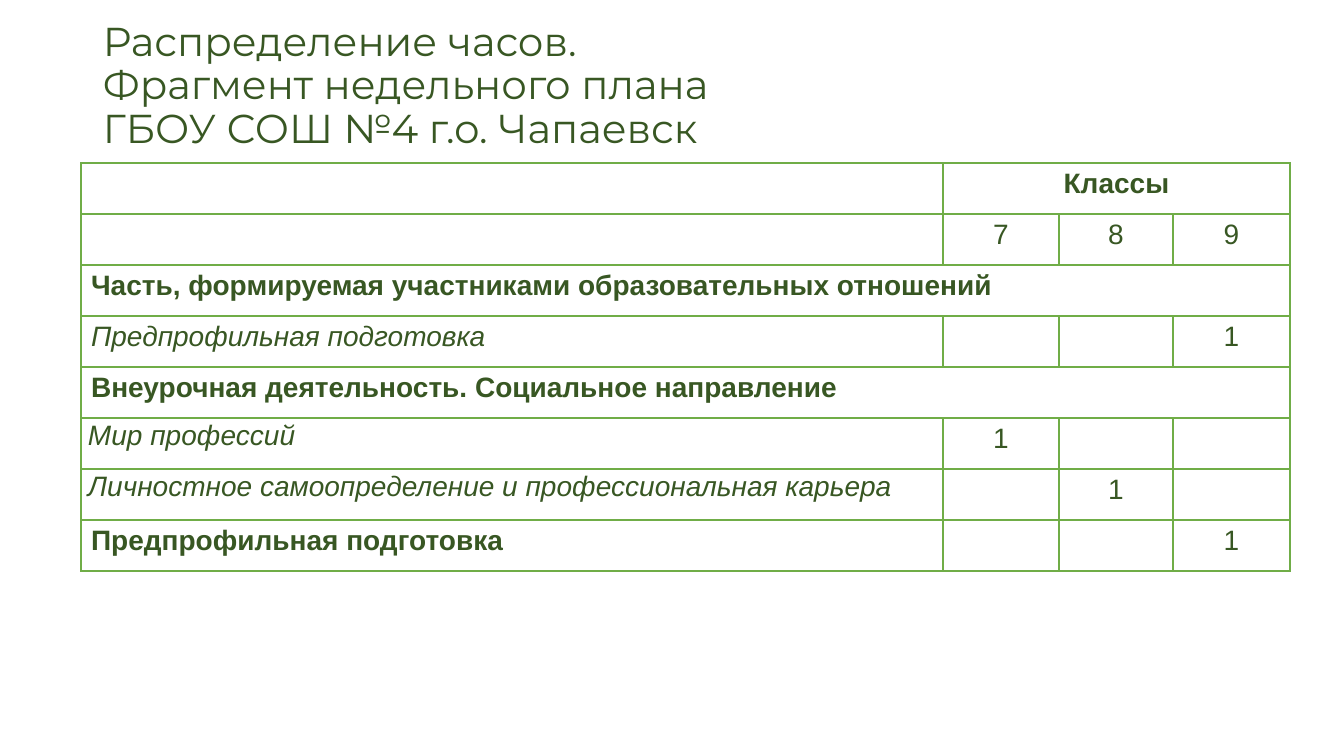
from dataclasses import dataclass

from lxml import etree
from pptx import Presentation
from pptx import util as u
from pptx.dml.color import RGBColor
from pptx.enum import text as t
from pptx.oxml import ns

TITLE = ["Распределение часов.", "Фрагмент недельного плана", "ГБОУ СОШ №4 г.о. Чапаевск"]

# Each row: style of the first cell, then the cell texts; a short row's last cell spans the rest.
ROWS = [
    ("plain", ["", "Классы"]),
    ("plain", ["", "7", "8", "9"]),
    ("bold", ["Часть, формируемая участниками образовательных отношений"]),
    ("italic", ["Предпрофильная подготовка", "", "", "1"]),
    ("bold", ["Внеурочная деятельность. Социальное направление"]),
    ("course", ["Мир профессий", "1", "", ""]),
    ("course", ["Личностное самоопределение и профессиональная карьера", "", "1", ""]),
    ("bold", ["Предпрофильная подготовка", "", "", "1"]),
]
STYLES = {
    "plain": {},
    "bold": {"bold": True},
    "italic": {"italic": True},
    "course": {"italic": True, "spacing": 1.06},
}

SLIDE = (1344, 756)
TITLE_BOX = (93, 49, 1159, 75)
TABLE_LEFT, TABLE_TOP = 81, 163
COLUMNS = [862, 116, 114, 117]
ROW_HEIGHT = 51
COURSE_INSET = 7


@dataclass(frozen=True)
class Theme:
    ink: str = "385723"
    border: str = "70AD47"
    title_font: str = "Montserrat"
    table_font: str = "Arial"
    title_size: float = 28.8
    table_size: float = 20
    border_width: float = 1


THEME = Theme()


def px(length):
    return u.Emu(round(length * 914400 / 100.8))


def write(frame, lines, *, font, size, bold=False, italic=False,
          align=t.PP_ALIGN.LEFT, spacing=None):
    """Fill the first paragraph with lines parted by line breaks."""
    para = frame.paragraphs[0]
    para.alignment = align
    para.line_spacing = spacing
    for index, line in enumerate(lines):
        if index:
            para.add_line_break()
        span = para.add_run()
        span.text = line
        span.font.name = font
        span.font.size = u.Pt(size)
        span.font.bold = bold
        span.font.italic = italic
        span.font.color.rgb = RGBColor.from_string(THEME.ink)


def outline(cell):
    properties = cell._tc.get_or_add_tcPr()
    for side in ("lnL", "lnR", "lnT", "lnB"):
        line = etree.SubElement(properties, ns.qn(f"a:{side}"),
                                w=str(u.Pt(THEME.border_width)))
        fill = etree.SubElement(line, ns.qn("a:solidFill"))
        etree.SubElement(fill, ns.qn("a:srgbClr"), val=THEME.border)


def add_title(page):
    frame = page.shapes.add_textbox(*map(px, TITLE_BOX)).text_frame
    frame.word_wrap = True
    frame.vertical_anchor = t.MSO_ANCHOR.MIDDLE
    write(frame, TITLE, font=THEME.title_font, size=THEME.title_size, spacing=0.9)


def add_hours_table(page):
    table = page.shapes.add_table(
        len(ROWS), len(COLUMNS), px(TABLE_LEFT), px(TABLE_TOP),
        px(sum(COLUMNS)), px(ROW_HEIGHT * len(ROWS))).table
    table.first_row = table.horz_banding = False
    for column, width in zip(table.columns, COLUMNS):
        column.width = px(width)
    for row in table.rows:
        row.height = px(ROW_HEIGHT)
    for cell in table.iter_cells():
        outline(cell)
        cell.fill.background()

    for row, (style, texts) in enumerate(ROWS):
        last = len(texts) - 1
        if len(texts) < len(COLUMNS):
            table.cell(row, last).merge(table.cell(row, len(COLUMNS) - 1))
        if style == "course":
            name_cell = table.cell(row, 0)
            name_cell.margin_left = name_cell.margin_right = px(COURSE_INSET)
            name_cell.margin_top = name_cell.margin_bottom = 0
        for column, words in enumerate(texts):
            if not words:
                continue
            if column == 0:
                look = STYLES[style]
            else:
                look = {"align": t.PP_ALIGN.CENTER, "bold": row == 0}
            write(table.cell(row, column).text_frame, [words],
                  font=THEME.table_font, size=THEME.table_size, **look)


def main():
    deck = Presentation()
    deck.slide_width, deck.slide_height = map(px, SLIDE)
    page = deck.slides.add_slide(deck.slide_layouts[6])
    add_title(page)
    add_hours_table(page)
    deck.save("out.pptx")


if __name__ == "__main__":
    main()
